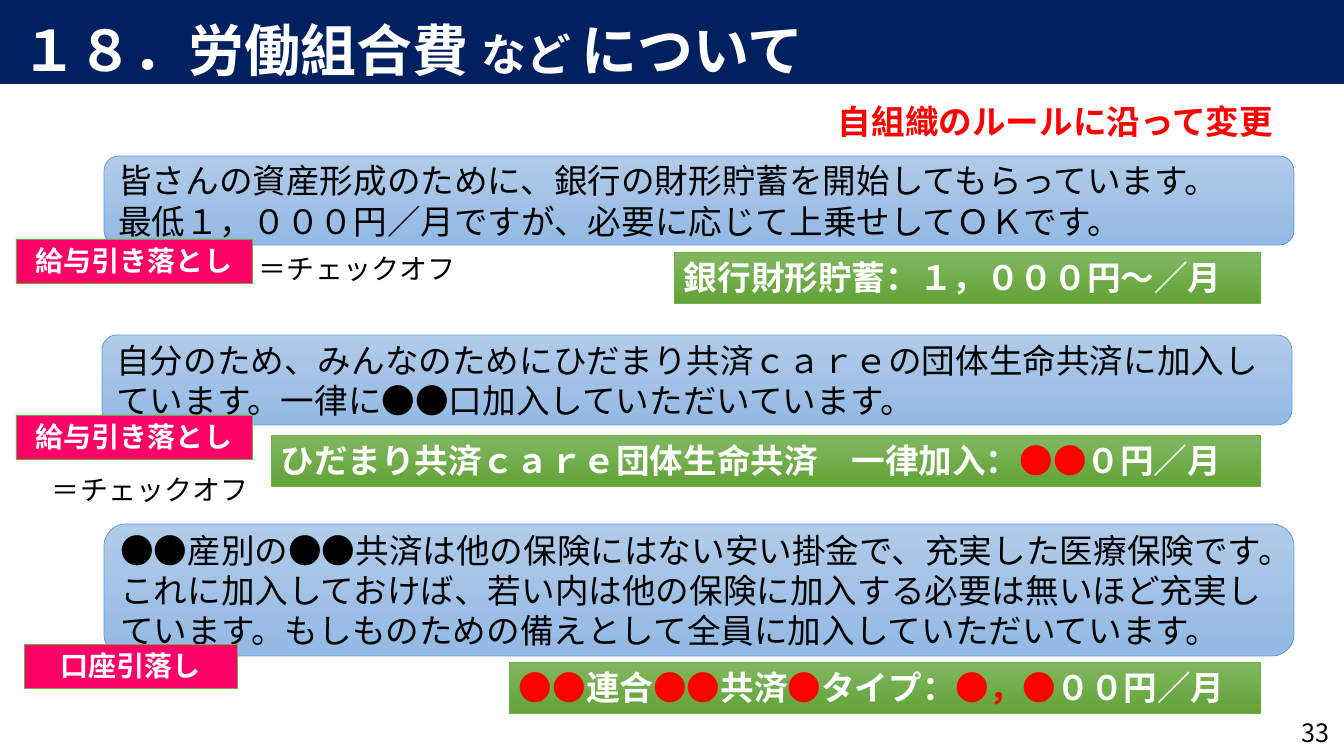
from pptx import Presentation
from pptx import util as u
from pptx.dml.color import RGBColor
from pptx.enum import shapes, text
from pptx.oxml.ns import qn

FONT = "Noto Sans CJK JP"
WHITE, BLACK, RED, NAVY, PINK, GREEN = "FFFFFF", "000000", "FF0000", "002060", "FF0066", "70AD47"
BLUE_FADE = ("B1CBE9", "93B9E4")
GREEN_FADE = ("81B861", "62A336")
LEFT, CENTER, RIGHT = text.PP_ALIGN.LEFT, text.PP_ALIGN.CENTER, text.PP_ALIGN.RIGHT
TOP, MIDDLE = text.MSO_ANCHOR.TOP, text.MSO_ANCHOR.MIDDLE
RECT, ROUNDED = shapes.MSO_SHAPE.RECTANGLE, shapes.MSO_SHAPE.ROUNDED_RECTANGLE


def px(length):
    return u.Emu(round(length * 914400 / 100.8))


def rgb(color):
    return RGBColor.from_string(color)


def style(run, size, color, bold):
    font = run.font
    font.size, font.bold, font.name = u.Pt(size), bold, FONT
    font.color.rgb = rgb(color)
    east_asian = run._r.get_or_add_rPr().makeelement(qn("a:ea"), {"typeface": FONT})
    run._r.rPr.find(qn("a:latin")).addnext(east_asian)


def write(shape, lines, size, color, bold=False, align=LEFT, anchor=TOP):
    frame = shape.text_frame
    frame.word_wrap = True
    frame.auto_size = text.MSO_AUTO_SIZE.NONE
    frame.vertical_anchor = anchor
    frame.text = "\n".join(lines)
    for paragraph in frame.paragraphs:
        paragraph.alignment = align
        for run in paragraph.runs:
            style(run, size, color, bold)


def box(slide, kind, place, fill, line=None):
    panel = slide.shapes.add_shape(kind, *map(px, place))
    panel.shadow.inherit = False
    if isinstance(fill, tuple):
        panel.fill.gradient()
        panel.fill.gradient_angle = 270
        for stop, color in zip(panel.fill.gradient_stops, fill):
            stop.color.rgb = rgb(color)
    else:
        panel.fill.solid()
        panel.fill.fore_color.rgb = rgb(fill)
    if line:
        panel.line.color.rgb = rgb(line)
        panel.line.width = u.Pt(0.5)
    else:
        panel.line.fill.background()
    return panel


def explanation(slide, place, lines):
    write(box(slide, ROUNDED, place, BLUE_FADE, "5B9BD5"), lines, 24, BLACK, anchor=MIDDLE)


def amount(slide, left, top, parts):
    right = 1260
    bar = box(slide, RECT, (left, top, right - left, 51), GREEN_FADE, GREEN)
    write(bar, [""], 24, WHITE)
    for wording, color in parts:
        run = bar.text_frame.paragraphs[0].add_run()
        run.text = wording
        style(run, 24, color, True)


def payment_tag(slide, left, top, width, wording):
    write(box(slide, RECT, (left, top, width, 44), PINK, GREEN), [wording], 20, WHITE, True, CENTER)


def note(slide, left, top, width, wording, size, color, bold=False):
    remark = slide.shapes.add_textbox(*map(px, (left, top, width, 49)))
    write(remark, [wording], size, color, bold)
    frame = remark.text_frame
    frame.margin_left = frame.margin_right = px(6)
    frame.margin_top = frame.margin_bottom = px(1)
    frame.paragraphs[0].line_spacing = u.Pt(35)


def heading(slide):
    box(slide, RECT, (0, 0, 1344, 84), NAVY)
    title = slide.shapes.title
    slide.shapes._spTree.append(title._element)
    title.left, title.top, title.width, title.height = map(px, (11, 10, 1282, 78))
    write(title, [""], 40, WHITE)
    for wording, size in (("１８．労働組合費 ", 40), ("など ", 32), ("について", 40)):
        run = title.text_frame.paragraphs[0].add_run()
        run.text = wording
        style(run, size, WHITE, True)


def main():
    deck = Presentation()
    deck.slide_width, deck.slide_height = px(1344), px(756)
    slide = deck.slides.add_slide(deck.slide_layouts[5])
    heading(slide)
    page = slide.shapes.add_textbox(*map(px, (1263, 712, 76, 40)))
    write(page, ["33"], 18, BLACK, align=RIGHT, anchor=MIDDLE)

    explanation(slide, (104, 156, 1190, 89), [
        "皆さんの資産形成のために、銀行の財形貯蓄を開始してもらっています。",
        "最低１，０００円／月ですが、必要に応じて上乗せしてＯＫです。"])
    explanation(slide, (102, 335, 1190, 90), [
        "自分のため、みんなのためにひだまり共済ｃａｒｅの団体生命共済に加入しています。"
        "一律に●●口加入していただいています。"])
    explanation(slide, (104, 524, 1190, 132), [
        "●●産別の●●共済は他の保険にはない安い掛金で、充実した医療保険です。"
        "これに加入しておけば、若い内は他の保険に加入する必要は無いほど充実しています。"
        "もしものための備えとして全員に加入していただいています。"])

    amount(slide, 674, 252, [("銀行財形貯蓄：１，０００円～／月", WHITE)])
    amount(slide, 271, 435, [
        ("ひだまり共済ｃａｒｅ団体生命共済　一律加入：", WHITE), ("●●", RED), ("０円／月", WHITE)])
    amount(slide, 509, 662, [
        ("●●", RED), ("連合", WHITE), ("●●", RED), ("共済", WHITE), ("●", RED),
        ("タイプ：", WHITE), ("●，●", RED), ("００円／月", WHITE)])

    payment_tag(slide, 24, 644, 213, "口座引落し")
    for top in (415, 239):
        payment_tag(slide, 16, top, 236, "給与引き落とし")

    note(slide, 832, 91, 501, "自組織のルールに沿って変更", 24, RED, True)
    for left, top in ((253, 235), (46, 456)):
        note(slide, left, top, 236, "＝チェックオフ", 20, BLACK)
    deck.save("out.pptx")


if __name__ == "__main__":
    main()
